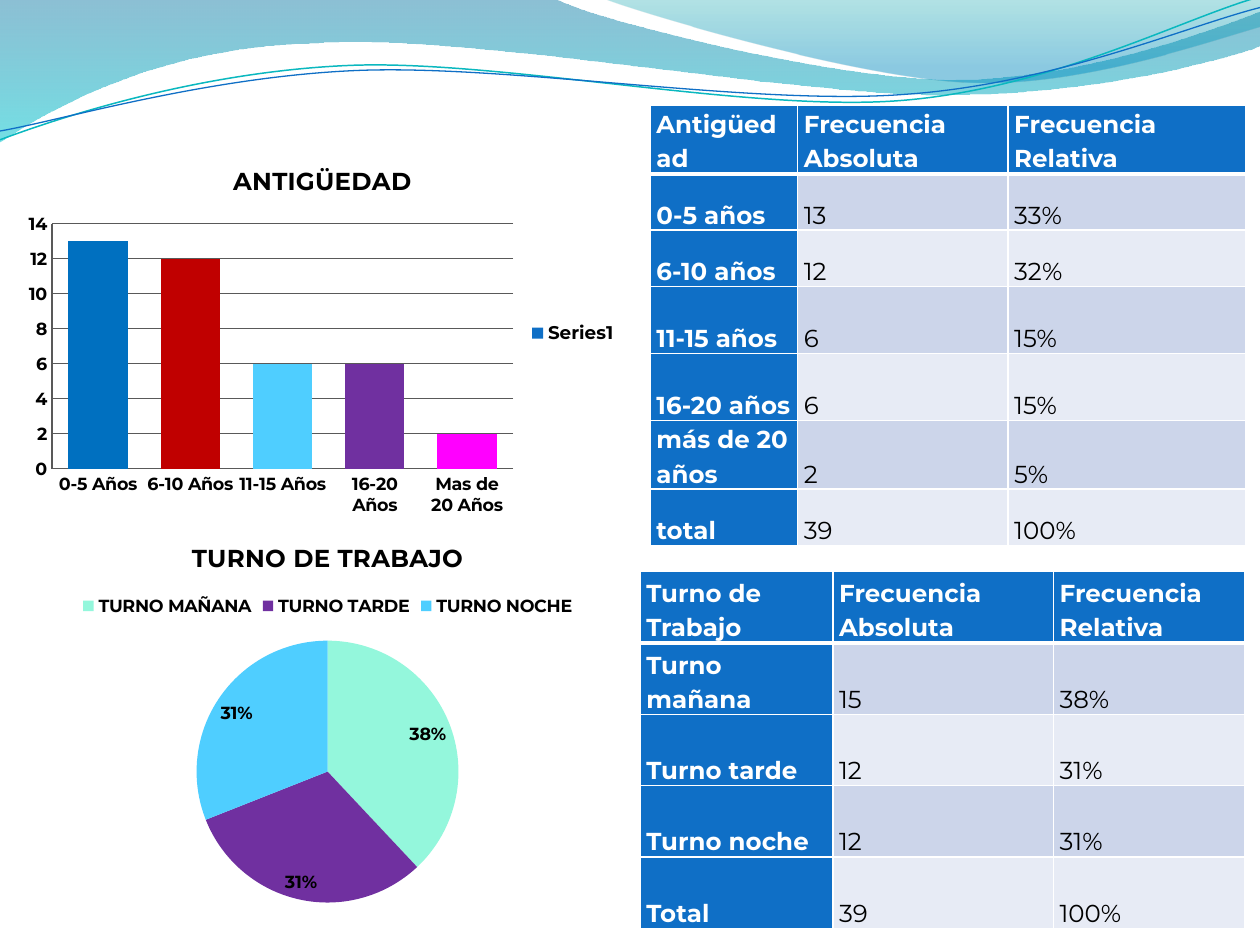
from dataclasses import dataclass

from lxml.etree import SubElement
from pptx import Presentation
from pptx.chart.data import CategoryChartData
from pptx.dml.color import RGBColor
from pptx.enum.chart import XL_CHART_TYPE, XL_LABEL_POSITION, XL_LEGEND_POSITION, XL_TICK_MARK
from pptx.enum.text import MSO_ANCHOR
from pptx.oxml import parse_xml
from pptx.oxml.ns import nsdecls, qn
from pptx.util import Inches, Pt


@dataclass(frozen=True)
class Theme:
    font: str = "Montserrat"
    title: float = 14
    legend: float = 10.5
    label: float = 10
    black: str = "000000"
    white: str = "FFFFFF"
    blue: str = "0F6FC6"
    teal: str = "0AB8BF"
    grid: str = "595959"
    bands: tuple = ("CCD5EA", "E7EBF5")
    bars: tuple = ("0070C0", "C00000", "4FCEFF", "7030A0", "FF00FF")
    slices: tuple = ("94F7DC", "7030A0", "4FCEFF")


theme = Theme()
deck = Presentation()
deck.slide_width, deck.slide_height = Inches(10), Inches(7.5)
page = deck.slides.add_slide(deck.slide_layouts[6])
column, row = deck.slide_width / 100, deck.slide_height / 100


def style_font(font, size, color, bold=True):
    font.name, font.size, font.bold = theme.font, Pt(size), bold
    font.color.rgb = RGBColor.from_string(color)


def draw_wave(start, pieces, closed):
    fine = 100
    anchors = [(round(x * fine), round(y * fine)) for x, y in [start] + [p[-2:] for p in pieces]]
    builder = page.shapes.build_freeform(*anchors[0], scale=column / fine)
    builder.add_line_segments(anchors[1:], close=closed)
    wave = builder.convert_to_shape()
    wave.shadow.inherit = False
    origin = [min(values) for values in zip(*anchors)]
    for segment, piece in zip(list(wave._element.iter(qn("a:lnTo"))), pieces):
        if len(piece) == 6:
            segment.tag = qn("a:cubicBezTo")
            for slot in (0, 1):
                x, y = (round(piece[2 * slot + i] * fine) - origin[i] for i in (0, 1))
                handle = SubElement(segment, qn("a:pt"), x=str(x), y=str(y))
                segment.insert(slot, handle)
    return wave


bands = [
    ((0, 0), [(44, -0.1), (47.6, 1.7, 66.4, 6.3, 75.8, 6.3), (85.3, 6.3, 95.8, 2.6, 100, 0.9),
              (100.1, 3.6), (98.3, 4.4, 87, 7.6, 74.6, 7.5), (62.2, 7.5, 38.2, 2.8, 25.7, 3.4),
              (12.9, 3.6, 4.6, 8.3, -0.1, 11.3)],
     [(0, "0074A1", 45), (1, "00C6CF", 55)]),
    ((47.9, -0.1), [(50.9, 1.1, 68.2, 6.2, 76.9, 6.5), (85.6, 6.9, 96.1, 3.2, 100, 2.1), (100, 0)],
     [(0, "00A1A9", 30), (0.8, "008BBF", 45)]),
]
for start, pieces, stops in bands:
    band = draw_wave(start, pieces, True)
    band.line.fill.background()
    band.fill.gradient()
    band.fill.gradient_angle = 270
    for stop, (position, color, opacity) in zip(band.fill.gradient_stops, stops):
        stop.position = position
        stop.color.rgb = RGBColor.from_string(color)
    for tint, (_, _, opacity) in zip(band._element.spPr.iter(qn("a:srgbClr")), stops):
        SubElement(tint, qn("a:alpha"), val=str(opacity * 1000))

strands = [
    ((0, 11.1), [(4.8, 9.3, 15.8, 5.7, 27.7, 5.2), (39.5, 4.7, 59.3, 8.9, 71.3, 8),
                 (83.3, 7.1, 93.8, 1.5, 99.8, -0.2)], theme.teal, 0.85),
    ((0, 10.4), [(4.7, 9.6, 16.4, 6.1, 28.3, 5.6), (40.3, 5.1, 59.7, 8.4, 71.7, 7.5),
                 (83.6, 6.7, 94.1, 2.1, 100, 0.6)], theme.blue, 0.75),
]
for start, pieces, color, width in strands:
    strand = draw_wave(start, pieces, False)
    strand.fill.background()
    strand.line.color.rgb = RGBColor.from_string(color)
    strand.line.width = Pt(width)

charts = [
    (XL_CHART_TYPE.COLUMN_STACKED, (1.2, 15.33, 48.8, 39.87), "ANTIGÜEDAD", "",
     ("0-5 Años", "6-10 Años", "11-15 Años", "16-20 Años", "Mas de 20 Años"),
     (13, 12, 6, 6, 2), theme.bars, XL_LEGEND_POSITION.RIGHT, theme.legend,
     (0.06, 0.21, 0.75, 0.65)),
    (XL_CHART_TYPE.PIE, (2, 55.2, 48, 42), "TURNO DE TRABAJO", "Series 1",
     ("TURNO MAÑANA", "TURNO TARDE", "TURNO NOCHE"),
     (38, 31, 31), theme.slices, XL_LEGEND_POSITION.TOP, theme.label,
     (0.28, 0.3, 0.44, 0.66)),
]
for kind, (left, top, width, height), title, name, groups, values, colors, side, size, plot_box in charts:
    numbers = CategoryChartData()
    numbers.categories = groups
    numbers.add_series(name, values)
    chart = page.shapes.add_chart(kind, int(left * column), int(top * row),
                                  int(width * column), int(height * row), numbers).chart
    style_font(chart.font, theme.label, theme.black)
    chart.has_title = True
    chart.chart_title.include_in_layout = False
    chart.chart_title.text_frame.text = title
    style_font(chart.chart_title.text_frame.paragraphs[0].runs[0].font, theme.title, theme.black)
    chart.has_legend = True
    chart.legend.position = side
    chart.legend.include_in_layout = False
    style_font(chart.legend.font, size, theme.black)
    plot = chart.plots[0]
    plot.vary_by_categories = kind == XL_CHART_TYPE.PIE
    series = plot.series[0]
    if kind == XL_CHART_TYPE.PIE:
        plot.has_data_labels = True
        labels = plot.data_labels
        labels.show_percentage, labels.show_value = True, False
        labels.number_format, labels.number_format_is_linked = "0%", False
        labels.position = XL_LABEL_POSITION.BEST_FIT
        style_font(labels.font, theme.label, theme.black)
    else:
        series._element.remove(series._element.find(qn("c:tx")))
        plot.gap_width, plot.overlap = 55, 100
        series.format.fill.solid()
        series.format.fill.fore_color.rgb = RGBColor.from_string(theme.blue)
        for axis in (chart.category_axis, chart.value_axis):
            axis.major_tick_mark = axis.minor_tick_mark = XL_TICK_MARK.NONE
            axis.format.line.color.rgb = RGBColor.from_string(theme.grid)
            style_font(axis.tick_labels.font, theme.label, theme.black)
        chart.value_axis.minimum_scale, chart.value_axis.maximum_scale = 0, 14
        chart.value_axis.major_unit = 2
        chart.value_axis.has_major_gridlines = True
        gridline = chart.value_axis.major_gridlines.format.line
        gridline.color.rgb = RGBColor.from_string(theme.grid)
        gridline.width = Pt(0.5)
    for index, color in enumerate(colors):
        fill = series.points[index].format.fill
        fill.solid()
        fill.fore_color.rgb = RGBColor.from_string(color)
    area = chart._chartSpace.chart.plotArea
    for old in area.findall(qn("c:layout")):
        area.remove(old)
    shares = "".join(f'<c:{key} val="{share}"/>' for key, share in zip("xywh", plot_box))
    area.insert(0, parse_xml(
        f'<c:layout {nsdecls("c")}><c:manualLayout><c:layoutTarget val="inner"/>'
        f'<c:xMode val="edge"/><c:yMode val="edge"/>{shares}</c:manualLayout></c:layout>'))

tables = [
    ((51.6, 11.15), (11.7, 16.7, 18.9), (7.1, 5.95, 5.95, 7.1, 7.1, 7.1, 5.95), [
        ("Antigüedad", "Frecuencia Absoluta", "Frecuencia Relativa"),
        ("0-5 años", "13", "33%"),
        ("6-10 años", "12", "32%"),
        ("11-15 años", "6", "15%"),
        ("16-20 años", "6", "15%"),
        ("más de 20 años", "2", "5%"),
        ("total", "39", "100%"),
    ]),
    ((50.8, 60.5), (15.3, 17.5, 15.2), (7.55,) * 5, [
        ("Turno de Trabajo", "Frecuencia Absoluta", "Frecuencia Relativa"),
        ("Turno mañana", "15", "38%"),
        ("Turno tarde", "12", "31%"),
        ("Turno noche", "12", "31%"),
        ("Total", "39", "100%"),
    ]),
]
for (left, top), widths, heights, records in tables:
    table = page.shapes.add_table(len(heights), len(widths), int(left * column), int(top * row),
                                  int(sum(widths) * column), int(sum(heights) * row)).table
    for table_column, width in zip(table.columns, widths):
        table_column.width = int(width * column)
    for r, (height, record) in enumerate(zip(heights, records)):
        table.rows[r].height = int(height * row)
        for c, text in enumerate(record):
            cell = table.cell(r, c)
            heading = r == 0 or c == 0
            cell.text_frame.text = text
            cell.vertical_anchor = MSO_ANCHOR.BOTTOM
            cell.margin_left = cell.margin_right = Inches(0.05)
            cell.margin_top = cell.margin_bottom = 0
            para = cell.text_frame.paragraphs[0]
            para.line_spacing = 1.15
            style_font(para.runs[0].font, theme.title, theme.white if heading else theme.black, heading)
            for edge in "LRTB":
                thick = (r, edge) in ((0, "B"), (1, "T"))
                border = SubElement(cell._tc.get_or_add_tcPr(), qn(f"a:ln{edge}"),
                                    w=str(Pt(3 if thick else 1)))
                SubElement(SubElement(border, qn("a:solidFill")), qn("a:srgbClr"), val=theme.white)
            cell.fill.solid()
            cell.fill.fore_color.rgb = RGBColor.from_string(
                theme.blue if heading else theme.bands[(r - 1) % 2])

deck.save("out.pptx")
